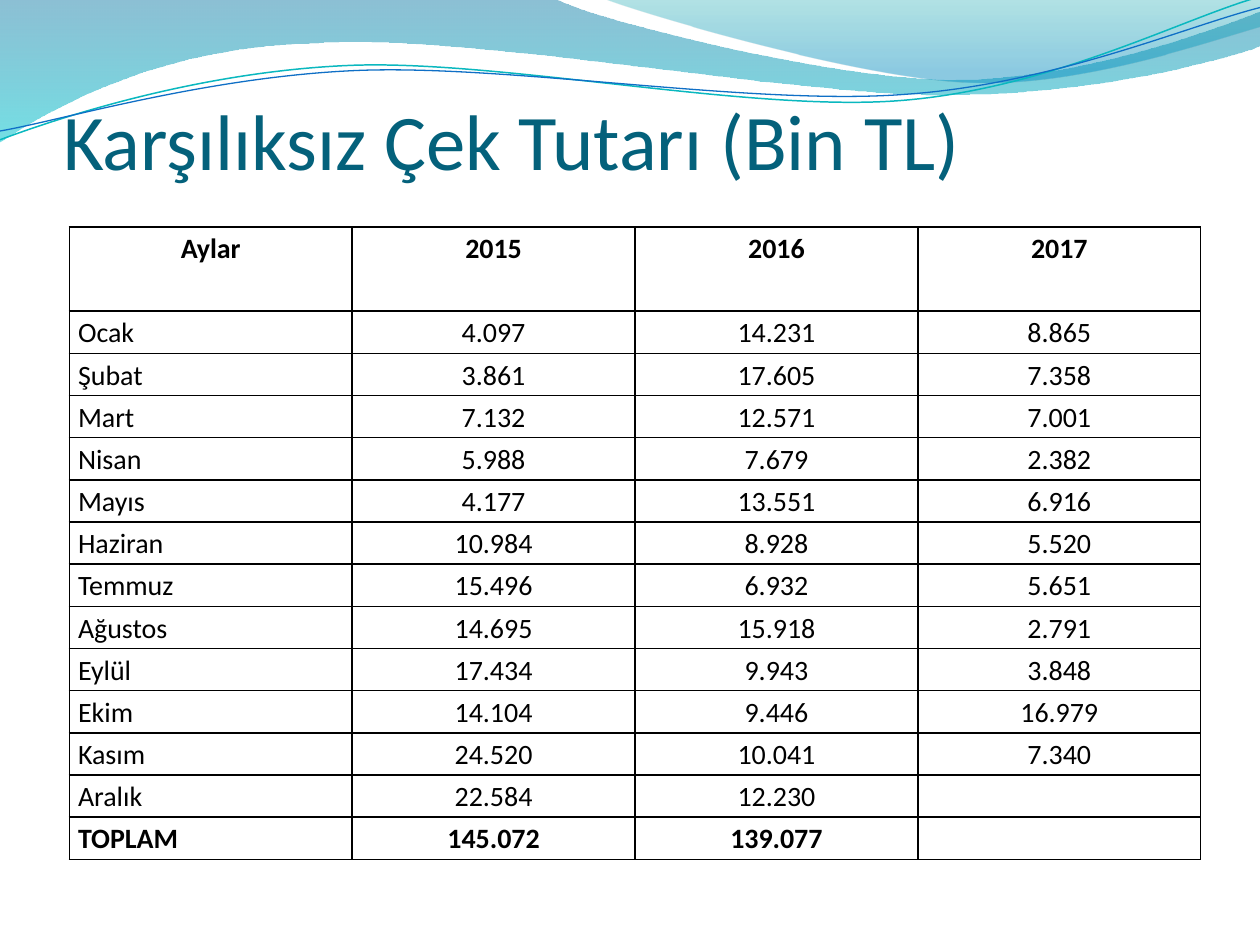
from lxml import etree
from pptx import Presentation
from pptx.dml.color import RGBColor
from pptx.enum.text import MSO_ANCHOR, PP_ALIGN
from pptx.oxml.ns import qn
from pptx.util import Inches, Pt

TITLE_ONLY = 5
LEFT, CENTER = PP_ALIGN.LEFT, PP_ALIGN.CENTER
BOTTOM = MSO_ANCHOR.BOTTOM
FONT = "Calibri"
COLORS = {
    "title": "04617B", "text": "000000", "border": "000000",
    "deep_blue": "0074A1", "aqua": "00C6CF", "teal": "00A1A9", "sky": "008BBF",
    "teal_line": "0AB8BF", "blue_line": "0F6FC6",
}

# Each wave: a start point, then line ends (x, y) or Bezier segments (x1, y1, x2, y2, x, y)
# Bands: wave, then gradient stops of (position, colour, opacity in percent)
BANDS = [
    ([(0, 0), (4.4, -0.01), (4.76, 0.17, 6.64, 0.63, 7.58, 0.63),
      (8.53, 0.63, 9.58, 0.26, 10, 0.09), (10.01, 0.36),
      (9.83, 0.44, 8.7, 0.76, 7.46, 0.75), (6.22, 0.75, 3.82, 0.28, 2.57, 0.34),
      (1.29, 0.36, 0.46, 0.83, -0.01, 1.13), (0, 0)],
     [(0, "deep_blue", 45), (1, "aqua", 55)]),
    ([(4.79, -0.01), (5.09, 0.11, 6.82, 0.62, 7.69, 0.65),
      (8.56, 0.69, 9.61, 0.32, 10, 0.21), (10, 0), (4.79, -0.01)],
     [(0, "teal", 30), (0.8, "sky", 45)]),
]
# Thin waves: wave, colour, width in points
THIN_WAVES = [
    ([(0, 1.11), (0.48, 0.93, 1.58, 0.57, 2.77, 0.52),
      (3.95, 0.47, 5.93, 0.89, 7.13, 0.8), (8.33, 0.71, 9.38, 0.15, 9.98, -0.02)],
     "teal_line", 0.85),
    ([(0, 1.04), (0.47, 0.96, 1.64, 0.61, 2.83, 0.56),
      (4.03, 0.51, 5.97, 0.84, 7.17, 0.75), (8.36, 0.67, 9.41, 0.21, 10, 0.06)],
     "blue_line", 0.75),
]
BOUNCED_CHEQUES = [
    ("Aylar", "2015", "2016", "2017"),
    ("Ocak", "4.097", "14.231", "8.865"),
    ("Şubat", "3.861", "17.605", "7.358"),
    ("Mart", "7.132", "12.571", "7.001"),
    ("Nisan", "5.988", "7.679", "2.382"),
    ("Mayıs", "4.177", "13.551", "6.916"),
    ("Haziran", "10.984", "8.928", "5.520"),
    ("Temmuz", "15.496", "6.932", "5.651"),
    ("Ağustos", "14.695", "15.918", "2.791"),
    ("Eylül", "17.434", "9.943", "3.848"),
    ("Ekim", "14.104", "9.446", "16.979"),
    ("Kasım", "24.520", "10.041", "7.340"),
    ("Aralık", "22.584", "12.230", ""),
    ("TOPLAM", "145.072", "139.077", ""),
]


def add_wave(shapes, segments, close):
    """Build a freeform through all points, then join each Bezier's three into a curve."""
    corners = [(Inches(s[i]), Inches(s[i + 1])) for s in segments for i in range(0, len(s), 2)]
    builder = shapes.build_freeform(*corners[0])
    builder.add_line_segments(corners[1:], close=close)
    wave = builder.convert_to_shape()
    wave.shadow.inherit = False
    lines = iter(list(wave._element.spPr.iter(qn("a:lnTo"))))
    for segment in segments[1:]:
        line = next(lines)
        if len(segment) == 6:
            curve = etree.Element(qn("a:cubicBezTo"))
            line.addprevious(curve)
            for part in (line, next(lines), next(lines)):
                curve.append(part[0])
                part.getparent().remove(part)
    return wave


def add_text(paragraph, text, size, color, bold=False):
    run = paragraph.add_run()
    run.text = text
    run.font.name = FONT
    run.font.size = Pt(size)
    run.font.bold = bold
    run.font.color.rgb = RGBColor.from_string(COLORS[color])


prs = Presentation()
prs.slide_width, prs.slide_height = Inches(10), Inches(7.5)
slide = prs.slides.add_slide(prs.slide_layouts[TITLE_ONLY])

# Waves along the top
for segments, stops in BANDS:
    band = add_wave(slide.shapes, segments, close=True)
    band.line.fill.background()
    band.fill.gradient()
    band.fill.gradient_angle = 270
    for stop, (position, color, opacity) in zip(band.fill.gradient_stops, stops):
        stop.position = position
        stop.color.rgb = RGBColor.from_string(COLORS[color])
    stop_colors = band._element.spPr.find(qn("a:gradFill")).iter(qn("a:srgbClr"))
    for stop_color, (position, color, opacity) in zip(stop_colors, stops):
        etree.SubElement(stop_color, qn("a:alpha"), val=str(opacity * 1000))

for segments, color, width in THIN_WAVES:
    thin_wave = add_wave(slide.shapes, segments, close=False)
    thin_wave.fill.background()
    thin_wave.line.color.rgb = RGBColor.from_string(COLORS[color])
    thin_wave.line.width = Pt(width)

# Title, brought in front of the waves
title = slide.shapes.title
slide.shapes._spTree.append(title._element)
title.left, title.top = Inches(0.5), Inches(0.77)
title.width, title.height = Inches(9.08), Inches(0.71)
heading = title.text_frame
heading.vertical_anchor = BOTTOM
heading.margin_left = heading.margin_right = heading.margin_bottom = 0
heading.margin_top = Inches(0.05)
heading.paragraphs[0].alignment = LEFT
add_text(heading.paragraphs[0], "Karşılıksız Çek Tutarı (Bin TL)", 45, "title")

# Monthly table: the header is two rows high
row_count, column_count = len(BOUNCED_CHEQUES), len(BOUNCED_CHEQUES[0])
table = slide.shapes.add_table(row_count, column_count, Inches(0.55), Inches(1.8),
                               Inches(8.98), Inches(5.02)).table
table.first_row = table.horz_banding = False
row_height = Inches(5.02) // (row_count + 1)
for r, values in enumerate(BOUNCED_CHEQUES):
    table.rows[r].height = row_height * 2 if r == 0 else row_height
    for c, value in enumerate(values):
        cell = table.cell(r, c)
        cell.margin_left = cell.margin_right = Inches(0.07)
        cell.margin_top = cell.margin_bottom = 0
        properties = cell._tc.get_or_add_tcPr()
        for side in ("a:lnL", "a:lnR", "a:lnT", "a:lnB"):
            border = etree.SubElement(properties, qn(side), w=str(Pt(1)))
            border_fill = etree.SubElement(border, qn("a:solidFill"))
            etree.SubElement(border_fill, qn("a:srgbClr"), val=COLORS["border"])
        cell.fill.background()
        if value:
            paragraph = cell.text_frame.paragraphs[0]
            paragraph.line_spacing = 1.15
            paragraph.alignment = LEFT if c == 0 and r > 0 else CENTER
            add_text(paragraph, value, 16, "text", bold=r in (0, row_count - 1))

prs.save("out.pptx")
